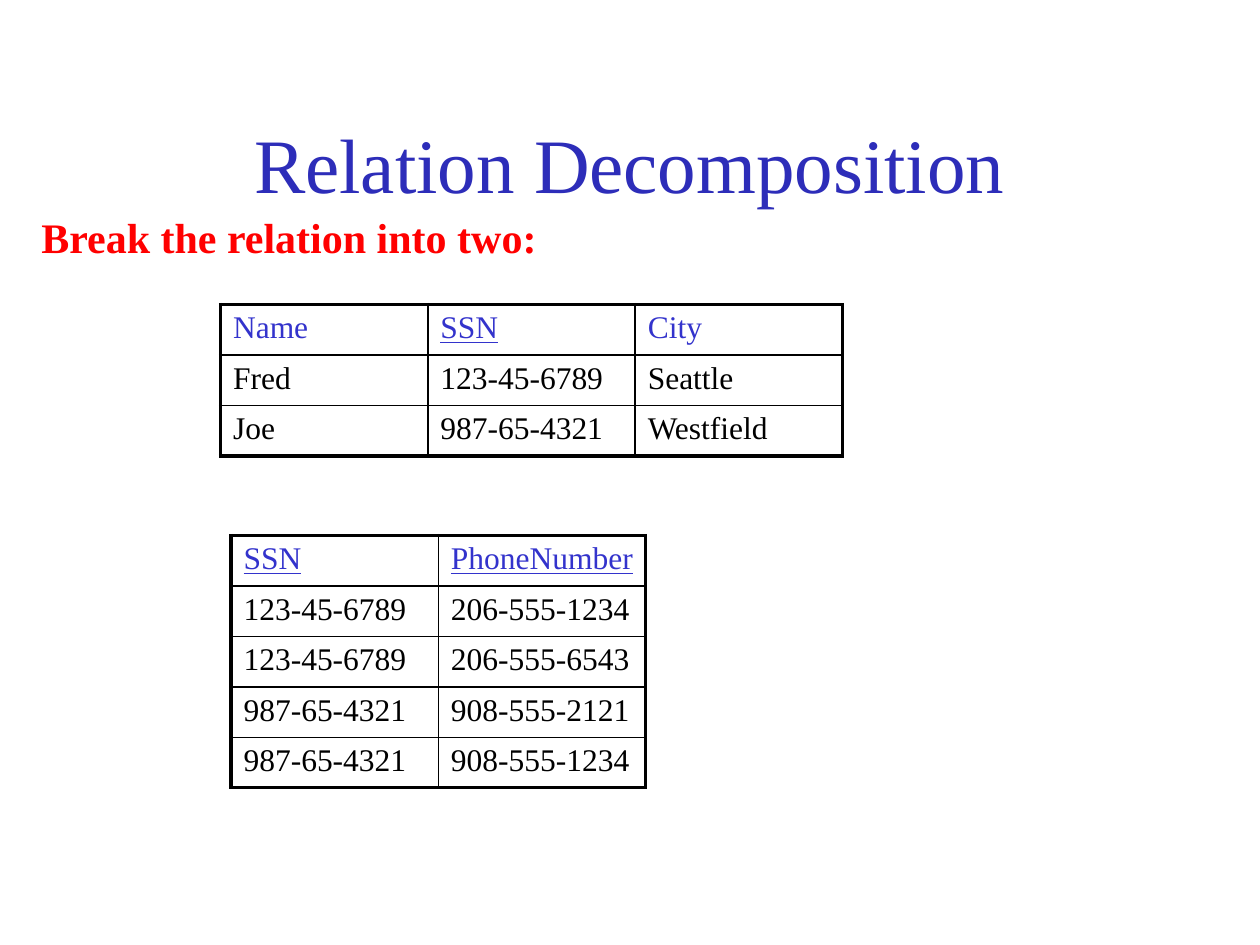
from lxml import etree
from pptx import Presentation
from pptx.dml.color import RGBColor
from pptx.enum import text
from pptx.oxml import ns
from pptx.util import Pt

COLORS = {"title": "2D2DB9", "lead": "FF0000", "head": "3333CC", "body": "000000", "line": "000000"}
FONT = "Times New Roman"
COL_W, ROW_H = 118.5, 28.8
THICK, THIN = 2.25, 1

PEOPLE = [
    ["Name", "SSN", "City"],
    ["Fred", "123-45-6789", "Seattle"],
    ["Joe", "987-65-4321", "Westfield"],
]
PHONES = [
    ["SSN", "PhoneNumber"],
    ["123-45-6789", "206-555-1234"],
    ["123-45-6789", "206-555-6543"],
    ["987-65-4321", "908-555-2121"],
    ["987-65-4321", "908-555-1234"],
]


def style(p, size, color, bold=False, underline=False):
    """Set the font of a paragraph."""
    f = p.font
    f.name, f.size, f.bold, f.underline = FONT, Pt(size), bold, underline
    f.color.rgb = RGBColor.from_string(COLORS[color])


def add_text(s, box, words, size, color, bold=False, center=False):
    """Place one line of text in a box."""
    tf = s.shapes.add_textbox(*map(Pt, box)).text_frame
    tf.word_wrap = center
    tf.vertical_anchor = text.MSO_ANCHOR.MIDDLE if center else text.MSO_ANCHOR.TOP
    p = tf.paragraphs[0]
    p.text = words
    p.alignment = text.PP_ALIGN.CENTER if center else text.PP_ALIGN.LEFT
    style(p, size, color, bold)


def add_border(cell, side, width):
    """Draw one side of a cell."""
    ln = etree.SubElement(cell._tc.get_or_add_tcPr(), ns.qn(f"a:ln{side}"), w=str(Pt(width)))
    fill = etree.SubElement(ln, ns.qn("a:solidFill"))
    etree.SubElement(fill, ns.qn("a:srgbClr"), val=COLORS["line"])


def add_relation(s, left, top, rows, keys):
    """Place a relation as a table with a thick frame and underlined keys."""
    n, m = len(rows), len(rows[0])
    table = s.shapes.add_table(n, m, Pt(left), Pt(top), Pt(m * COL_W), Pt(n * ROW_H)).table
    table.first_row = table.horz_banding = False
    for row in table.rows:
        row.height = Pt(ROW_H)
    for i, row in enumerate(rows):
        for j, value in enumerate(row):
            cell = table.cell(i, j)
            outer = {"L": j == 0, "R": j == m - 1, "T": i == 0, "B": i == n - 1}
            for side, edge in outer.items():
                add_border(cell, side, THICK if edge else THIN)
            cell.fill.background()
            p = cell.text_frame.paragraphs[0]
            p.text = value
            style(p, 18, "body" if i else "head", underline=i == 0 and value in keys)


def main():
    """Build the slide and save it."""
    prs = Presentation()
    prs.slide_width, prs.slide_height = Pt(720), Pt(540)
    s = prs.slides.add_slide(prs.slide_layouts[6])
    add_text(s, (54, 48, 612, 90), "Relation Decomposition", 44, "title", center=True)
    add_text(s, (16.5, 117.5, 298, 36), "Break the relation into two:", 24, "lead", bold=True)
    add_relation(s, 126, 174, PEOPLE, {"SSN"})
    add_relation(s, 132, 306, PHONES, {"SSN", "PhoneNumber"})
    prs.save("out.pptx")


if __name__ == "__main__":
    main()
